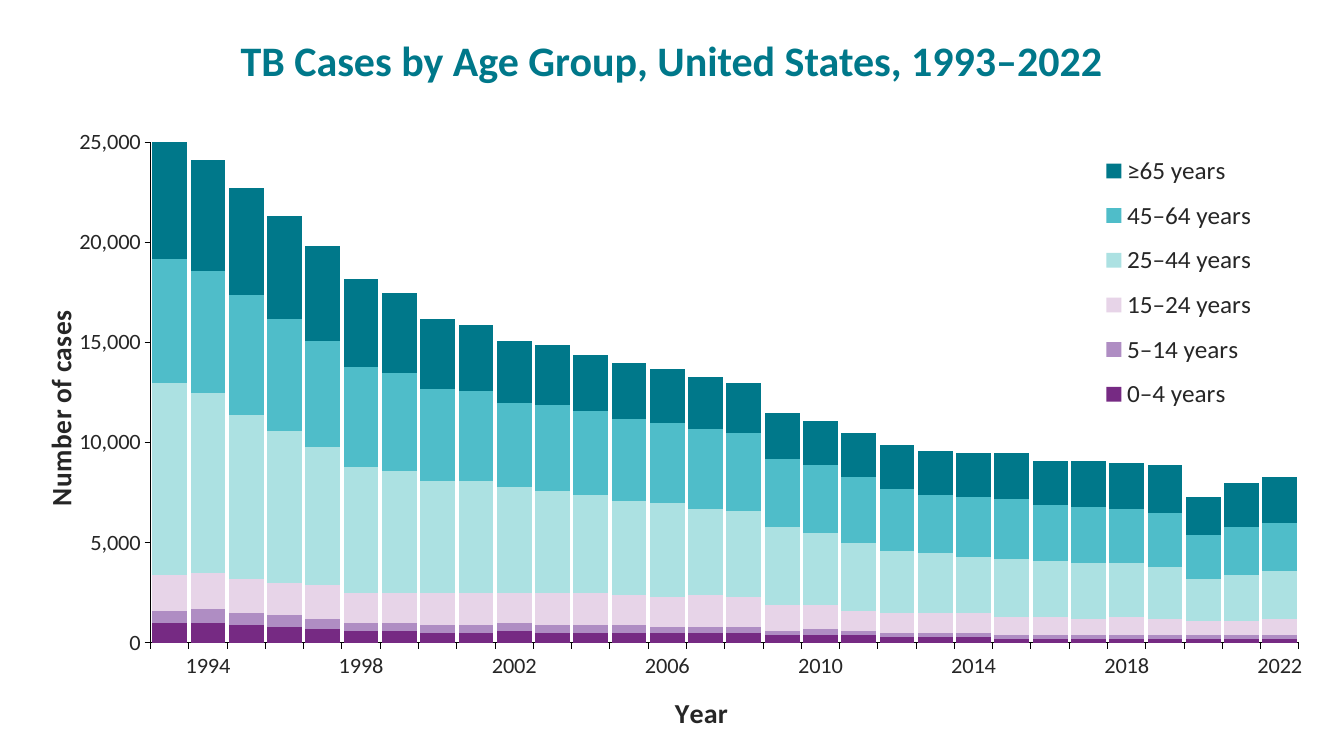
from lxml.etree import SubElement
from pptx import Presentation
from pptx.chart.data import CategoryChartData
from pptx.dml.color import RGBColor
from pptx.enum.chart import XL_CHART_TYPE, XL_LEGEND_POSITION, XL_TICK_MARK
from pptx.enum.text import MSO_ANCHOR, PP_ALIGN
from pptx.oxml import parse_xml
from pptx.oxml.ns import nsdecls, qn
from pptx.util import Pt

TEAL = RGBColor(0x00, 0x78, 0x8A)
AQUA = RGBColor(0x4F, 0xBD, 0xC9)
MINT = RGBColor(0xAC, 0xE1, 0xE2)
LILAC = RGBColor(0xE7, 0xD4, 0xE8)
LAVENDER = RGBColor(0xAF, 0x8D, 0xC3)
PURPLE = RGBColor(0x76, 0x2A, 0x83)
INK = RGBColor(0x26, 0x26, 0x26)
BLACK = RGBColor(0x00, 0x00, 0x00)

YEARS = range(1993, 2023)
AGE_GROUPS = [
    ("0–4 years", PURPLE,
     [10, 10, 9, 8, 7, 6, 6, 5, 5, 6, 5, 5, 5, 5, 5,
      5, 4, 4, 4, 3, 3, 3, 2, 2, 2, 2, 2, 2, 2, 2]),
    ("5–14 years", LAVENDER,
     [6, 7, 6, 6, 5, 4, 4, 4, 4, 4, 4, 4, 4, 3, 3,
      3, 2, 3, 2, 2, 2, 2, 2, 2, 2, 2, 2, 2, 2, 2]),
    ("15–24 years", LILAC,
     [18, 18, 17, 16, 17, 15, 15, 16, 16, 15, 16, 16, 15, 15, 16,
      15, 13, 12, 10, 10, 10, 10, 9, 9, 8, 9, 8, 7, 7, 8]),
    ("25–44 years", MINT,
     [96, 90, 82, 76, 69, 63, 61, 56, 56, 53, 51, 49, 47, 47, 43,
      43, 39, 36, 34, 31, 30, 28, 29, 28, 28, 27, 26, 21, 23, 24]),
    ("45–64 years", AQUA,
     [62, 61, 60, 56, 53, 50, 49, 46, 45, 42, 43, 42, 41, 40, 40,
      39, 34, 34, 33, 31, 29, 30, 30, 28, 28, 27, 27, 22, 24, 24]),
    ("≥65 years", TEAL,
     [58, 55, 53, 51, 47, 44, 40, 35, 33, 31, 30, 28, 28, 27, 26,
      25, 23, 22, 22, 22, 22, 22, 23, 22, 23, 23, 24, 19, 22, 23]),
]


class SlideBuilder:
    font_name = "Calibri"

    def __init__(self, slide):
        self.slide = slide

    def style(self, font, size, color, bold=False):
        font.name = self.font_name
        font.size = Pt(size)
        font.color.rgb = color
        font.bold = bold

    def heading(self, text, left, top, width, height):
        box = self.slide.shapes.add_textbox(Pt(left), Pt(top), Pt(width), Pt(height))
        frame = box.text_frame
        frame.word_wrap = True
        frame.vertical_anchor = MSO_ANCHOR.BOTTOM
        frame.text = text
        line = frame.paragraphs[0]
        line.alignment = PP_ALIGN.CENTER
        line.line_spacing = Pt(40)
        self.style(line.runs[0].font, 30, TEAL, True)

    def place(self, part, index, **fractions):
        for old in part.findall(qn("c:layout")):
            part.remove(old)
        layout = parse_xml(f"<c:layout {nsdecls('c')}><c:manualLayout/></c:layout>")
        settings = {"xMode": "edge", "yMode": "edge", **fractions}
        for name, value in settings.items():
            SubElement(layout[0], qn(f"c:{name}")).set("val", str(value))
        part.insert(index, layout)

    def axis(self, axis, title, x, y, rotation):
        axis.has_major_gridlines = False
        axis.major_tick_mark = XL_TICK_MARK.OUTSIDE
        axis.minor_tick_mark = XL_TICK_MARK.NONE
        axis.format.line.color.rgb = BLACK
        axis.format.line.width = Pt(0.75)
        self.style(axis.tick_labels.font, 16, INK)
        axis_title = axis.axis_title
        axis_title.text_frame.text = title
        self.style(axis_title.text_frame.paragraphs[0].runs[0].font, 20, INK, True)
        for body in axis_title._element.iter(qn("a:bodyPr")):
            body.set("rot", str(rotation * 60000))
        self.place(axis_title._element, 1, x=x, y=y)

    def legend(self, chart):
        chart.has_legend = True
        chart.legend.position = XL_LEGEND_POSITION.RIGHT
        chart.legend.include_in_layout = False
        self.style(chart.legend.font, 18, INK)
        self.place(chart.legend._element, 1, x=0.8, y=0.03, w=0.15, h=0.47)

    def stacked_chart(self, left, top, width, height):
        data = CategoryChartData(number_format="#,##0")
        data.categories = [str(year) if year % 4 == 2 else "" for year in YEARS]
        for name, _, hundreds in AGE_GROUPS:
            data.add_series(name, [count * 100 for count in hundreds])
        chart = self.slide.shapes.add_chart(
            XL_CHART_TYPE.COLUMN_STACKED,
            Pt(left), Pt(top), Pt(width), Pt(height), data).chart
        chart.has_title = False
        self.style(chart.font, 10, BLACK)
        columns = chart.plots[0]
        columns.gap_width = 10
        columns.overlap = 100
        columns.vary_by_categories = False
        for series, (_, color, _) in zip(columns.series, AGE_GROUPS):
            series.format.fill.solid()
            series.format.fill.fore_color.rgb = color
        chart.value_axis.minimum_scale = 0
        chart.value_axis.maximum_scale = 25000
        chart.value_axis.major_unit = 5000
        chart.value_axis.tick_labels.number_format = "#,##0"
        chart.value_axis.tick_labels.number_format_is_linked = False
        self.axis(chart.category_axis, "Year", 0.49, 0.94, 0)
        self.axis(chart.value_axis, "Number of cases", 0.01, 0.31, -90)
        label_skip = parse_xml(f'<c:tickLblSkip {nsdecls("c")} val="1"/>')
        chart.category_axis._element.find(qn("c:noMultiLvlLbl")).addprevious(label_skip)
        self.legend(chart)
        plot_area = chart._chartSpace.find(f".//{qn('c:plotArea')}")
        self.place(plot_area, 0, x=0.097, y=0.032, w=0.869, h=0.832)
        target = parse_xml(f'<c:layoutTarget {nsdecls("c")} val="inner"/>')
        plot_area[0][0].insert(0, target)


def main():
    deck = Presentation()
    deck.slide_width = Pt(960)
    deck.slide_height = Pt(540)
    builder = SlideBuilder(deck.slides.add_slide(deck.slide_layouts[6]))
    builder.heading("TB Cases by Age Group, United States, 1993–2022", 48, 9.5, 864, 54.5)
    builder.stacked_chart(16, 88, 944, 440)
    deck.save("out.pptx")


if __name__ == "__main__":
    main()
